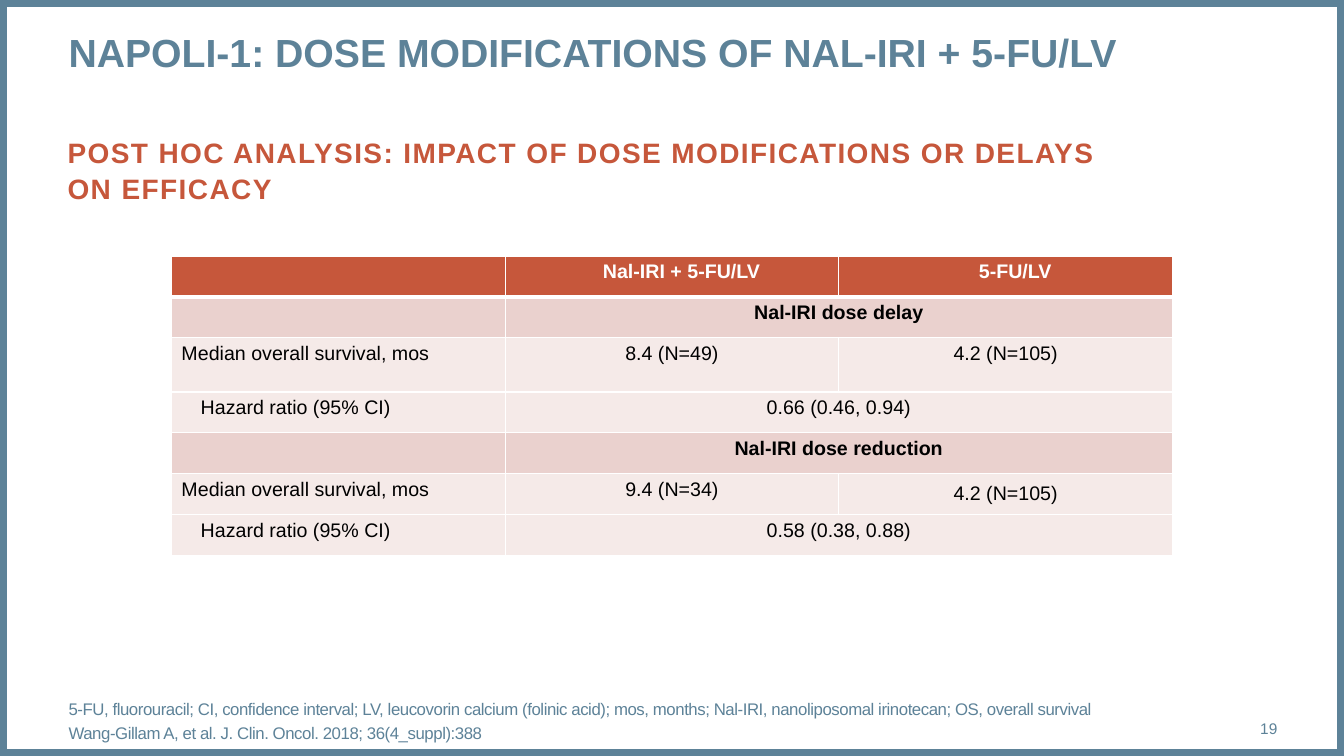
from lxml import etree
from pptx import Presentation
from pptx.dml.color import RGBColor
from pptx.enum import shapes, text
from pptx.oxml import ns
from pptx.util import Inches, Pt

BLUE = RGBColor(0x5D, 0x82, 0x98)
RUST = RGBColor(0xC6, 0x57, 0x3B)
PINK = RGBColor(0xEA, 0xD1, 0xCE)
PALE = RGBColor(0xF5, 0xEA, 0xE8)
WHITE = RGBColor(0xFF, 0xFF, 0xFF)
BLACK = RGBColor(0, 0, 0)

FONT = "Arial"
INDENT = Inches(0.19)
ROW_HEIGHT = 0.405
TALL_ROW_HEIGHT = 0.54

HEADER, SECTION, SURVIVAL, RATIO = "header", "section", "survival", "ratio"
ROWS = [
    (HEADER, ["", "Nal-IRI + 5-FU/LV", "5-FU/LV"]),
    (SECTION, ["", "Nal-IRI dose delay"]),
    (SURVIVAL, ["Median overall survival, mos", "8.4 (N=49)", "4.2 (N=105)"]),
    (RATIO, ["Hazard ratio (95% CI)", "0.66 (0.46, 0.94)"]),
    (SECTION, ["", "Nal-IRI dose reduction"]),
    (SURVIVAL, ["Median overall survival, mos", "9.4 (N=34)", "4.2 (N=105)"]),
    (RATIO, ["Hazard ratio (95% CI)", "0.58 (0.38, 0.88)"]),
]
ROW_FILLS = {HEADER: RUST, SECTION: PINK, SURVIVAL: PALE, RATIO: PALE}
TALL_ROW = 2
CENTRED_CELL = (5, 2)

FOOTNOTES = [
    "5-FU, fluorouracil; CI, confidence interval; LV, leucovorin calcium (folinic acid); "
    "mos, months; Nal‑IRI, nanoliposomal irinotecan; OS, overall survival",
    "Wang-Gillam A, et al. J. Clin. Oncol. 2018; 36(4_suppl):388",
]


def style_font(paragraph, size, color, bold=False):
    font = paragraph.font
    font.name = FONT
    font.size = Pt(size)
    font.bold = bold
    font.color.rgb = color


def fill_text(shape, box, lines, size, color, bold=False, spacing=0, space_before=0,
              line_spacing=1.0, align=text.PP_ALIGN.LEFT, anchor=text.MSO_ANCHOR.TOP):
    shape.left, shape.top, shape.width, shape.height = map(Inches, box)
    frame = shape.text_frame
    frame.word_wrap = True
    frame.auto_size = text.MSO_AUTO_SIZE.NONE
    frame.vertical_anchor = anchor
    frame.margin_left = frame.margin_right = frame.margin_top = frame.margin_bottom = 0
    frame.text = "\n".join(lines)
    for number, paragraph in enumerate(frame.paragraphs):
        properties = paragraph._p.get_or_add_pPr()
        properties.set("marL", "0")
        properties.set("indent", "0")
        etree.SubElement(properties, ns.qn("a:buNone"))
        paragraph.alignment = align
        paragraph.line_spacing = line_spacing
        paragraph.space_before = Pt(space_before if number else 0)
        style_font(paragraph, size, color, bold)
        for run in paragraph.runs:
            run._r.get_or_add_rPr().set("spc", str(round(spacing * 100)))


def add_frame(slide, box):
    frame = slide.shapes.add_shape(shapes.MSO_SHAPE.RECTANGLE, *map(Inches, box))
    frame.shadow.inherit = False
    frame.fill.background()
    frame.line.color.rgb = BLUE
    frame.line.width = Pt(10)


def add_heading(slide, box):
    left, top, width, height = box
    fill_text(slide.shapes.title, (left, top, width, 0.94),
              ["NAPOLI-1: DOSE MODIFICATIONS OF NAL-IRI + 5-FU/LV"], 28, BLUE, bold=True)
    fill_text(slide.placeholders[1], (left - 0.01, top + 1.05, 10.41, height - 1.05),
              ["POST HOC ANALYSIS: IMPACT OF DOSE MODIFICATIONS OR DELAYS ON EFFICACY"],
              20, RUST, bold=True, spacing=1, line_spacing=1.05)


def set_borders(cell, bottom_width):
    properties = cell._tc.get_or_add_tcPr()
    for side, width in zip("LRTB", (1, 1, 1, bottom_width)):
        line = etree.SubElement(properties, ns.qn(f"a:ln{side}"), w=str(Pt(width)))
        fill = etree.SubElement(line, ns.qn("a:solidFill"))
        etree.SubElement(fill, ns.qn("a:srgbClr"), val=str(WHITE))


def style_cell(cell, kind, column):
    is_header = kind == HEADER
    set_borders(cell, 3 if is_header else 1)
    cell.fill.solid()
    cell.fill.fore_color.rgb = ROW_FILLS[kind]
    paragraph = cell.text_frame.paragraphs[0]
    paragraph.alignment = text.PP_ALIGN.CENTER if column else text.PP_ALIGN.LEFT
    if is_header or (kind == RATIO and column == 0):
        paragraph._p.get_or_add_pPr().set("indent", str(INDENT))
    style_font(paragraph, 14, WHITE if is_header else BLACK, kind in (HEADER, SECTION))


def add_efficacy_table(slide, box):
    shape = slide.shapes.add_table(len(ROWS), 3, *map(Inches, box))
    table = shape.table
    table.horz_banding = False
    for row, (kind, values) in enumerate(ROWS):
        table.rows[row].height = Inches(TALL_ROW_HEIGHT if row == TALL_ROW else ROW_HEIGHT)
        if len(values) == 2:
            table.cell(row, 1).merge(table.cell(row, 2))
        for column in range(3):
            cell = table.cell(row, column)
            if column < len(values):
                cell.text = values[column]
            style_cell(cell, kind, column)
    table.cell(*CENTRED_CELL).vertical_anchor = text.MSO_ANCHOR.MIDDLE


def add_footer(slide, box):
    left, top, width, height = box
    number_width = 0.86
    notes_width = width - number_width
    fill_text(slide.placeholders[2], (left, top, notes_width, height), FOOTNOTES, 12, BLUE,
              spacing=-0.3, space_before=3, anchor=text.MSO_ANCHOR.MIDDLE)
    number = slide.shapes.add_textbox(0, 0, 0, 0)
    fill_text(number, (left + notes_width, top + 0.08, number_width, height), ["19"], 11, BLUE,
              align=text.PP_ALIGN.RIGHT, anchor=text.MSO_ANCHOR.MIDDLE)


def main():
    presentation = Presentation()
    presentation.slide_width = Inches(13.33)
    presentation.slide_height = Inches(7.5)
    slide = presentation.slides.add_slide(presentation.slide_layouts.get_by_name("Two Content"))
    add_frame(slide, (0, 0, 13.33, 7.5))
    add_heading(slide, (0.68, 0.28, 11.99, 1.82))
    add_efficacy_table(slide, (1.7, 2.54, 9.93, 2.97))
    add_footer(slide, (0.68, 6.95, 11.99, 0.4))
    presentation.save("out.pptx")


if __name__ == "__main__":
    main()
